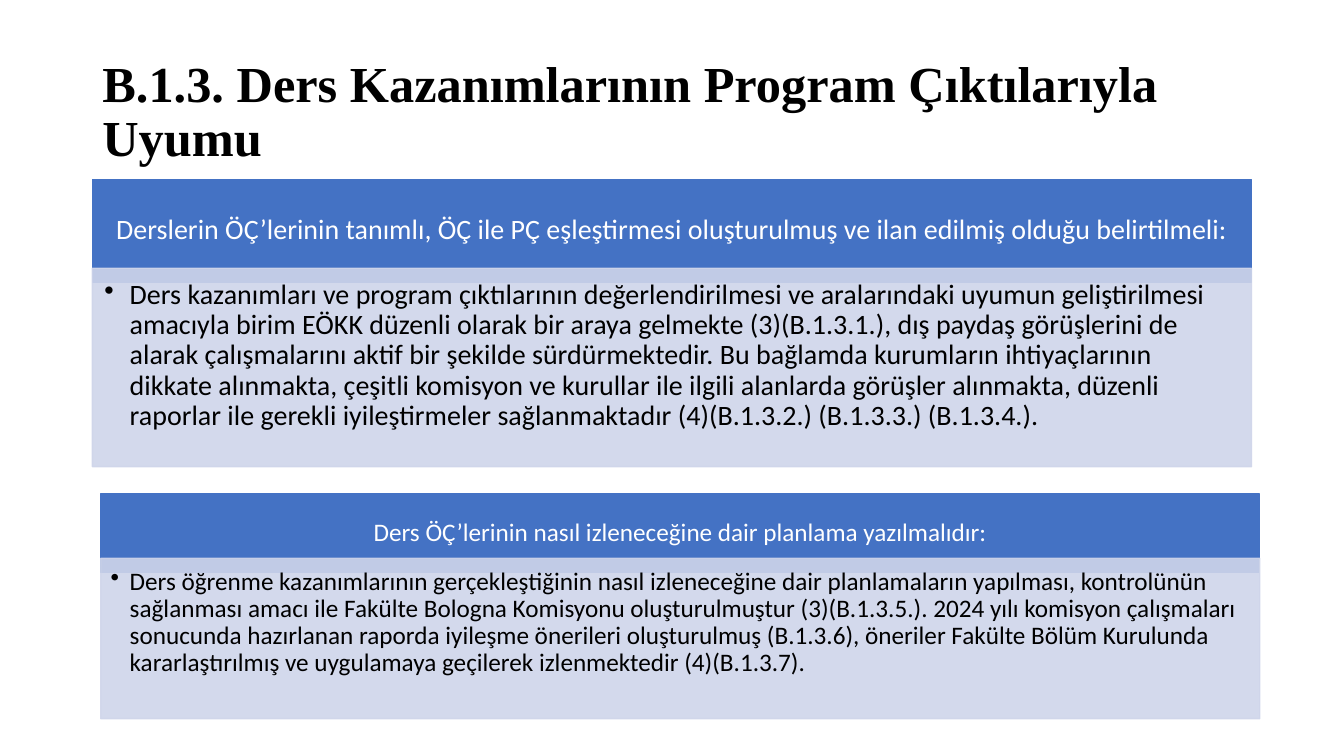
"""Builds the slide on matching course outcomes with programme outcomes."""
import dataclasses

import lxml.etree
import pptx
import pptx.dml.color
import pptx.enum.shapes
import pptx.enum.text
import pptx.oxml.ns
import pptx.util

Cm = pptx.util.Cm
Pt = pptx.util.Pt
Align = pptx.enum.text.PP_ALIGN
Anchor = pptx.enum.text.MSO_ANCHOR
qn = pptx.oxml.ns.qn


@dataclasses.dataclass(frozen=True)
class Theme:
    """Colours, fonts and type sizes of the slide."""
    ink: str = "000000"
    paper: str = "FFFFFF"
    accent: str = "4472C4"
    tint: str = "CFD5EA"
    tint_opacity: int = 90
    title_font: str = "Times New Roman"
    body_font: str = "Calibri"
    title_size: int = 36
    large_size: int = 20
    small_size: int = 18
    line_spacing: float = 0.9


class SlideBuilder:
    """Holds the theme and the current page and draws its elements."""

    def __init__(self, page, theme):
        self.page = page
        self.theme = theme

    def add_text(self, box, text, size, color, insets, anchor, align=Align.LEFT, font=None, bold=False):
        """Fill a box with one paragraph and return the paragraph."""
        frame = box.text_frame
        frame.word_wrap = True
        frame.vertical_anchor = anchor
        frame.margin_left, frame.margin_top, frame.margin_right, frame.margin_bottom = map(Cm, insets)
        para = frame.paragraphs[0]
        para.alignment = align
        para.line_spacing = self.theme.line_spacing
        span = para.add_run()
        span.text = text
        span.font.name = font or self.theme.body_font
        span.font.size = Pt(size)
        span.font.bold = bold
        span.font.color.rgb = pptx.dml.color.RGBColor.from_string(color)
        return para

    def title(self, text, left, top, width, height):
        """Add the bold heading of the page."""
        box = self.page.shapes.add_textbox(Cm(left), Cm(top), Cm(width), Cm(height))
        self.add_text(box, text, self.theme.title_size, self.theme.ink, (0.25, 0.13, 0.25, 0.13),
                      Anchor.MIDDLE, font=self.theme.title_font, bold=True)

    def bar(self, group, left, top, width, height, color, opacity=100):
        """Add a filled rectangle with an outline of the same colour."""
        box = group.shapes.add_shape(pptx.enum.shapes.MSO_SHAPE.RECTANGLE,
                                     Cm(left), Cm(top), Cm(width), Cm(height))
        box.shadow.inherit = False
        box.fill.solid()
        box.line.width = Pt(1)
        for paint in (box.fill.fore_color, box.line.color):
            paint.rgb = pptx.dml.color.RGBColor.from_string(color)
        if opacity < 100:
            for tone in list(box._element.spPr.iter(qn("a:srgbClr"))):
                lxml.etree.SubElement(tone, qn("a:alpha"), val=str(opacity * 1000))
        return box

    def bullet(self, para, indent):
        """Give a paragraph a hanging bullet."""
        properties = para._p.get_or_add_pPr()
        properties.set("marL", str(Cm(indent)))
        properties.set("indent", str(-Cm(indent)))
        lxml.etree.SubElement(properties, qn("a:buChar"), char="•")

    def panel(self, heading, detail, left, width, head_span, body_span, size, head_insets, body_insets, indent):
        """Add a heading bar with a bulleted detail box that overlaps its foot."""
        theme = self.theme
        group = self.page.shapes.add_group_shape()
        head_top, head_height = head_span
        body_top, body_height = body_span
        head = self.bar(group, left, head_top, width, head_height, theme.accent)
        self.add_text(head, heading, size, theme.paper, head_insets, Anchor.MIDDLE, Align.CENTER)
        body = self.bar(group, left, body_top, width, body_height, theme.tint, theme.tint_opacity)
        para = self.add_text(body, detail, size, theme.ink, body_insets, Anchor.TOP)
        self.bullet(para, indent)


def main():
    """Build and save the deck."""
    deck = pptx.Presentation()
    deck.slide_width, deck.slide_height = Cm(33.87), Cm(19.05)
    theme = Theme()
    builder = SlideBuilder(deck.slides.add_slide(deck.slide_layouts[6]), theme)
    width = 29.21
    builder.title("B.1.3. Ders Kazanımlarının Program Çıktılarıyla Uyumu", 2.33, 1.01, width, 3.68)
    builder.panel(
        "Derslerin ÖÇ’lerinin tanımlı, ÖÇ ile PÇ eşleştirmesi oluşturulmuş ve ilan edilmiş olduğu belirtilmeli:",
        "Ders kazanımları ve program çıktılarının değerlendirilmesi ve aralarındaki uyumun geliştirilmesi "
        "amacıyla birim EÖKK düzenli olarak bir araya gelmekte (3)(B.1.3.1.), dış paydaş görüşlerini de "
        "alarak çalışmalarını aktif bir şekilde sürdürmektedir. Bu bağlamda kurumların ihtiyaçlarının "
        "dikkate alınmakta, çeşitli komisyon ve kurullar ile ilgili alanlarda görüşler alınmakta, düzenli "
        "raporlar ile gerekli iyileştirmeler sağlanmaktadır (4)(B.1.3.2.) (B.1.3.3.) (B.1.3.4.).",
        left=2.33, width=width, head_span=(4.52, 2.59), body_span=(6.76, 5.0), size=theme.large_size,
        head_insets=(0.41, 0.23, 0.41, 0.23), body_insets=(0.3, 0.3, 0.41, 0.43), indent=0.64)
    builder.panel(
        "Ders ÖÇ’lerinin nasıl izleneceğine dair planlama yazılmalıdır:",
        "Ders öğrenme kazanımlarının gerçekleştiğinin nasıl izleneceğine dair planlamaların yapılması, "
        "kontrolünün sağlanması amacı ile Fakülte Bologna Komisyonu oluşturulmuştur (3)(B.1.3.5.). 2024 yılı "
        "komisyon çalışmaları sonucunda hazırlanan raporda iyileşme önerileri oluşturulmuş (B.1.3.6), öneriler "
        "Fakülte Bölüm Kurulunda kararlaştırılmış ve uygulamaya geçilerek izlenmektedir (4)(B.1.3.7).",
        left=2.54, width=width, head_span=(12.45, 1.98), body_span=(14.07, 4.04), size=theme.small_size,
        head_insets=(0.36, 0.2, 0.36, 0.2), body_insets=(0.25, 0.25, 0.36, 0.41), indent=0.48)
    deck.save("out.pptx")


if __name__ == "__main__":
    main()
